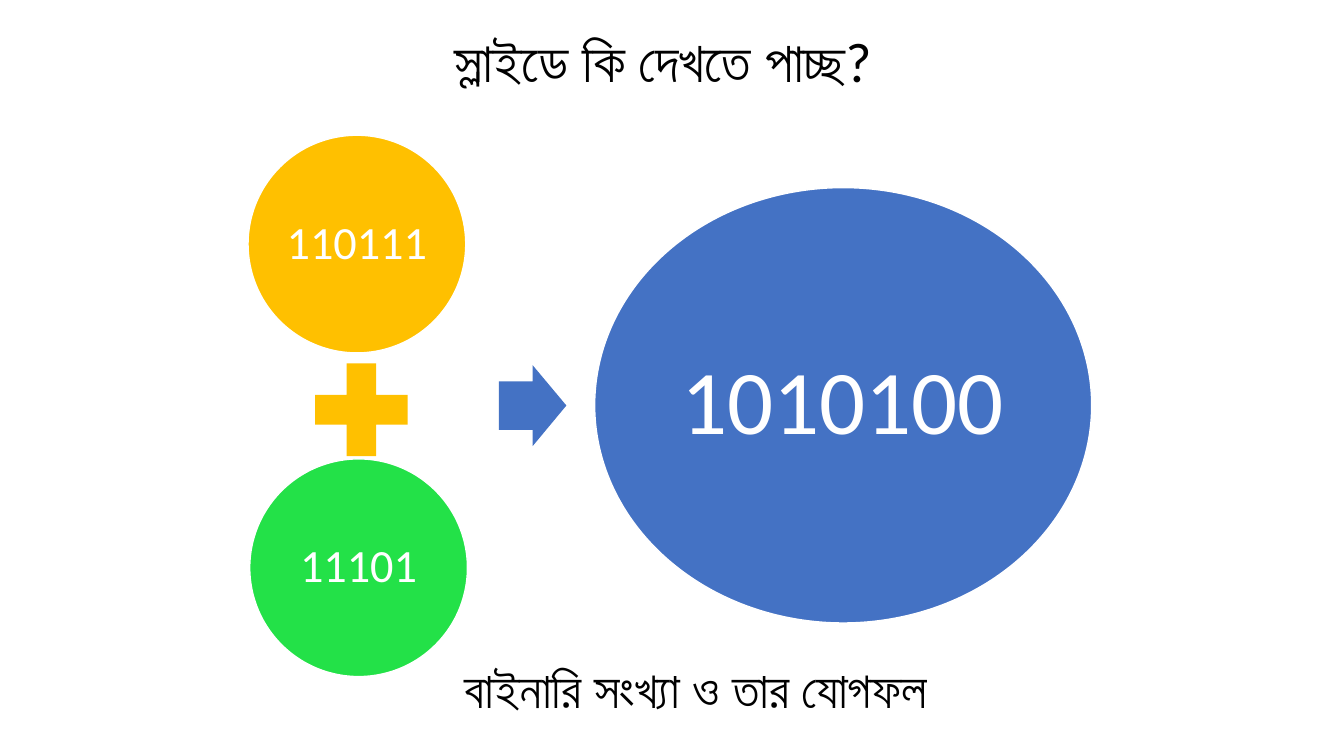
from dataclasses import dataclass

from pptx import Presentation
from pptx.dml.color import RGBColor
from pptx.enum.shapes import MSO_SHAPE as Shape
from pptx.enum.text import MSO_ANCHOR as Anchor, MSO_AUTO_SIZE as AutoSize, PP_ALIGN as Align
from pptx.util import Pt


@dataclass(frozen=True)
class Theme:
    font: str = "Calibri"
    black: str = "000000"
    white: str = "FFFFFF"
    gold: str = "FFC000"
    green: str = "23E148"
    blue: str = "4472C4"
    title_size: int = 40
    caption_size: int = 36
    addend_size: int = 33
    sum_size: int = 65


class SlideBuilder:
    def __init__(self, slide, theme):
        self.slide = slide
        self.theme = theme

    def add_run(self, paragraph, text, size, color):
        run = paragraph.add_run()
        run.text = text
        run.font.name = self.theme.font
        run.font.size = Pt(size)
        run.font.color.rgb = RGBColor.from_string(color)

    def symbol(self, kind, box, color):
        shape = self.slide.shapes.add_shape(kind, *map(Pt, box))
        shape.shadow.inherit = False
        shape.fill.solid()
        shape.fill.fore_color.rgb = RGBColor.from_string(color)
        shape.line.fill.background()
        return shape

    def number_circle(self, box, color, number, size, inset):
        shape = self.symbol(Shape.OVAL, box, color)
        shape.line.color.rgb = RGBColor.from_string(self.theme.white)
        shape.line.width = Pt(1)
        frame = shape.text_frame
        frame.word_wrap = True
        frame.vertical_anchor = Anchor.MIDDLE
        frame.margin_left = frame.margin_right = Pt(inset)
        frame.margin_top = frame.margin_bottom = Pt(inset)
        paragraph = frame.paragraphs[0]
        paragraph.alignment = Align.CENTER
        paragraph.line_spacing = 0.9
        self.add_run(paragraph, number, size, self.theme.white)

    def label(self, box, text, size):
        frame = self.slide.shapes.add_textbox(*map(Pt, box)).text_frame
        frame.word_wrap = True
        frame.auto_size = AutoSize.SHAPE_TO_FIT_TEXT
        self.add_run(frame.paragraphs[0], text, size, self.theme.black)


def main():
    presentation = Presentation()
    presentation.slide_width = Pt(960)
    presentation.slide_height = Pt(540)
    theme = Theme()
    builder = SlideBuilder(presentation.slides.add_slide(presentation.slide_layouts[6]), theme)

    diameter = 155.5
    addends = [
        (177.2, 96.6, theme.gold, "110111"),
        (178.4, 327.8, theme.green, "11101"),
    ]
    for left, top, color, number in addends:
        builder.number_circle((left, top, diameter, diameter), color, number, theme.addend_size, 3.6)

    builder.symbol(Shape.MATH_PLUS, (213.1, 247.7, 90, 90), theme.gold)
    arrow = builder.symbol(Shape.RIGHT_ARROW, (356.4, 260.8, 48.2, 57.8), theme.blue)
    arrow.adjustments[0] = 0.6
    arrow.adjustments[1] = 0.5
    arrow.rotation = 359.9

    builder.number_circle((424.8, 134, 355, 311), theme.blue, "1010100", theme.sum_size, 6.5)
    builder.label((317.5, 15.1, 437.8, 55.4), "স্লাইডে কি দেখতে পাচ্ছ?", theme.title_size)
    builder.label((324.7, 466.6, 532.8, 51.1), "বাইনারি সংখ্যা ও তার যোগফল", theme.caption_size)

    presentation.save("out.pptx")


if __name__ == "__main__":
    main()
